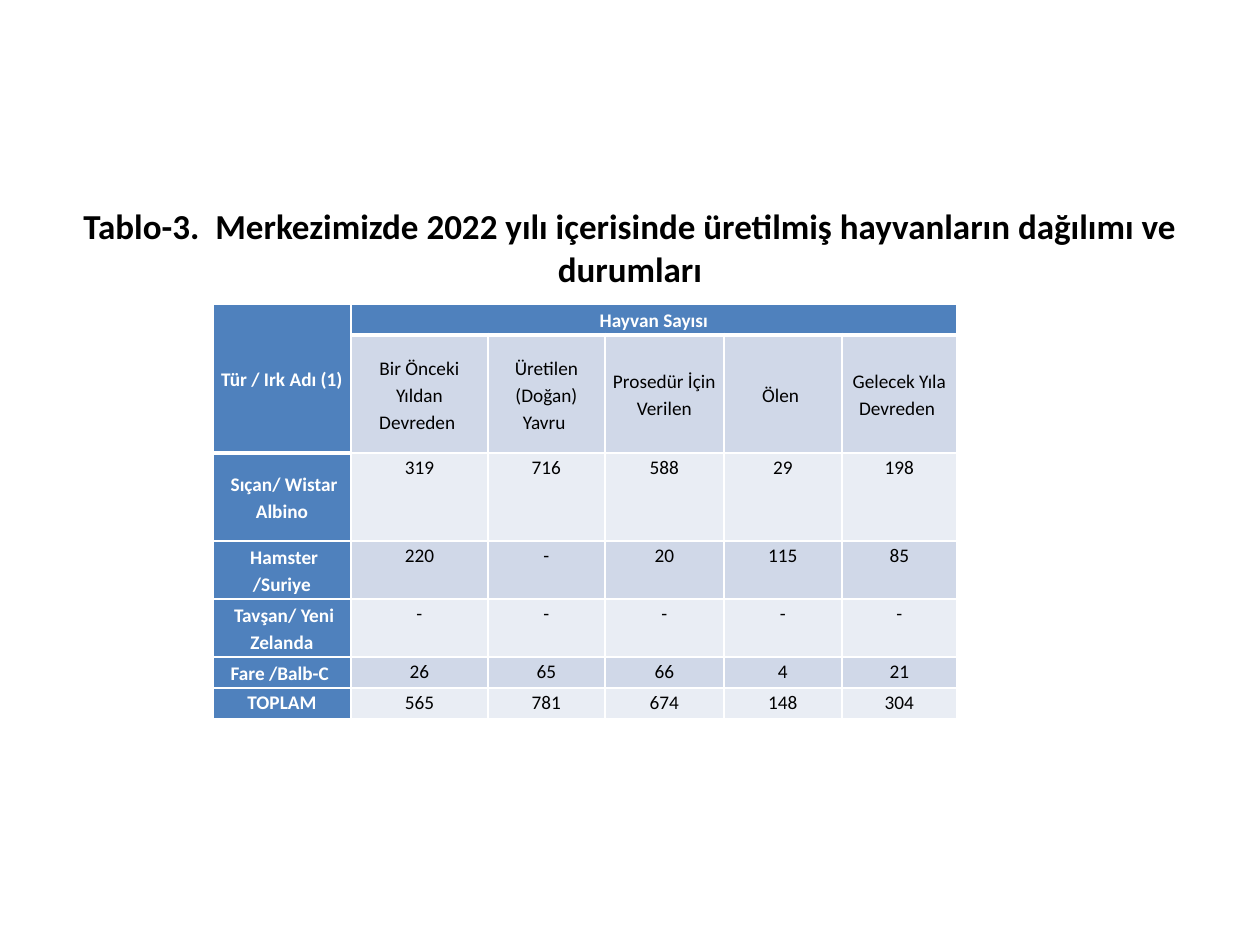
from pptx import Presentation
from pptx.dml.color import RGBColor
from pptx.enum.text import MSO_ANCHOR, PP_ALIGN
from pptx.oxml.ns import qn
from pptx.util import Pt
from lxml.etree import SubElement

SCALE = 7257
FONT = "Calibri"
COLORS = {"white": "FFFFFF", "black": "000000", "head": "4F81BD",
          "dark": "D0D8E8", "light": "E9EDF4"}
COLS = [138, 137, 117, 119, 118, 115]
ROWS = [31, 118, 88, 58, 58, 31, 31]
TITLE = "Tablo-3.  Merkezimizde 2022 yılı içerisinde üretilmiş hayvanların dağılımı ve durumları"
DATA = [
    ["Tür / Irk Adı (1)", "Hayvan Sayısı", "", "", "", ""],
    ["", "Bir Önceki Yıldan Devreden ", "Üretilen (Doğan) Yavru ",
     "Prosedür İçin Verilen", "Ölen ", "Gelecek Yıla Devreden "],
    [" Sıçan/ Wistar Albino", "319", "716", "588", "29", "198"],
    [" Hamster /Suriye", "220", "-", "20", "115", "85"],
    [" Tavşan/ Yeni Zelanda", "-", "-", "-", "-", "-"],
    ["Fare /Balb-C ", "26", "65", "66", "4", "21"],
    ["TOPLAM", "565", "781", "674", "148", "304"],
]


def px(n):
    return n * SCALE


def write(frame, text, size=11, color="black", bold=False, line=None, after=0):
    para = frame.paragraphs[0]
    para.alignment = PP_ALIGN.CENTER
    para.line_spacing = line
    para.space_after = Pt(after)
    run = para.add_run()
    run.text = text
    font = run.font
    font.name, font.size, font.bold = FONT, Pt(size), bold
    font.color.rgb = RGBColor.from_string(COLORS[color])


def edge(cell, base):
    props = cell._tc.get_or_add_tcPr()
    for side, width in zip("LRTB", (1, 1, 1, base)):
        line = SubElement(props, qn(f"a:ln{side}"), w=str(Pt(width)))
        fill = SubElement(line, qn("a:solidFill"))
        SubElement(fill, qn("a:srgbClr"), val=COLORS["white"])


def add_title(slide, x, y, w, h):
    title = slide.shapes.title
    title.left, title.top, title.width, title.height = map(px, (x, y, w, h))
    frame = title.text_frame
    frame.word_wrap = True
    frame.vertical_anchor = MSO_ANCHOR.TOP
    frame.margin_top = frame.margin_bottom = 0
    write(frame, TITLE, size=20, bold=True)


def add_grid(slide, x, y):
    table = slide.shapes.add_table(
        len(ROWS), len(COLS), px(x), px(y), px(sum(COLS)), px(sum(ROWS))).table
    for col, width in zip(table.columns, COLS):
        col.width = px(width)
    for row, height in zip(table.rows, ROWS):
        row.height = px(height)
    table.cell(0, 0).merge(table.cell(1, 0))
    table.cell(0, 1).merge(table.cell(0, 5))
    for r, texts in enumerate(DATA):
        for c, text in enumerate(texts):
            cell = table.cell(r, c)
            head = r == 0 or c == 0
            edge(cell, 3 if r == 0 or (r, c) == (1, 0) else 1)
            cell.fill.solid()
            tone = "head" if head else "dark" if r % 2 else "light"
            cell.fill.fore_color.rgb = RGBColor.from_string(COLORS[tone])
            cell.margin_left = cell.margin_right = px(6)
            cell.margin_top = cell.margin_bottom = 0
            middle = r < 2 or (c == 0 and r < len(ROWS) - 1)
            cell.vertical_anchor = MSO_ANCHOR.MIDDLE if middle else MSO_ANCHOR.TOP
            if text:
                write(cell.text_frame, text, color="white" if head else "black",
                      bold=head, line=1.15, after=10)


def main():
    deck = Presentation()
    deck.slide_width, deck.slide_height = px(1260), px(945)
    slide = deck.slides.add_slide(deck.slide_layouts[5])
    add_title(slide, 0, 205, 1260, 86)
    add_grid(slide, 213, 304)
    deck.save("out.pptx")


if __name__ == "__main__":
    main()
